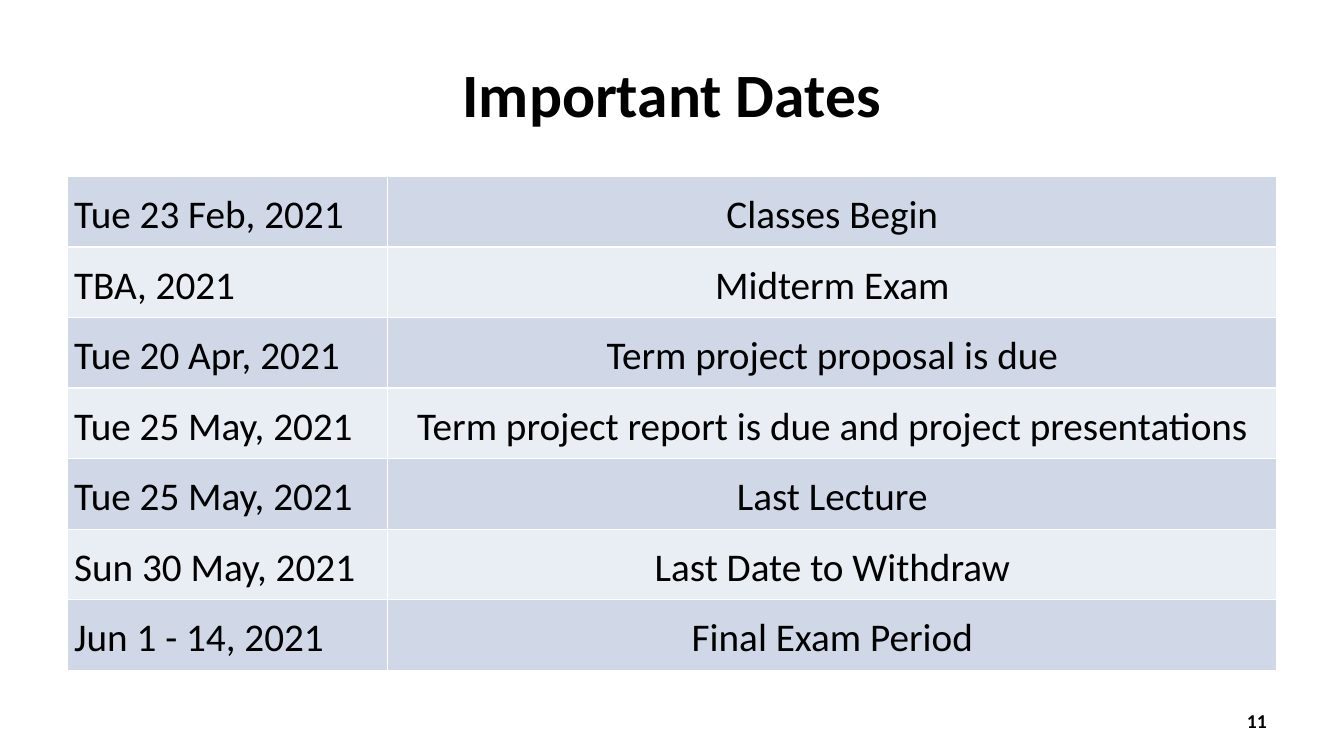
from lxml import etree
from pptx import Presentation
from pptx.dml.color import RGBColor
from pptx.enum import text
from pptx.oxml import ns
from pptx.util import Pt

BLACK = RGBColor(0, 0, 0)
DARK = RGBColor(0xD0, 0xD8, 0xE8)
LIGHT = RGBColor(0xE9, 0xED, 0xF4)
WHITE = RGBColor(0xFF, 0xFF, 0xFF)
MID = text.MSO_ANCHOR.MIDDLE
ALIGN = text.PP_ALIGN

DATES = [
    ("Tue 23 Feb, 2021", "Classes Begin"),
    ("TBA, 2021", "Midterm Exam"),
    ("Tue 20 Apr, 2021", "Term project proposal is due"),
    ("Tue 25 May, 2021", "Term project report is due and project presentations"),
    ("Tue 25 May, 2021", "Last Lecture"),
    ("Sun 30 May, 2021", "Last Date to Withdraw"),
    ("Jun 1 - 14, 2021", "Final Exam Period"),
]


def style(frame, size, bold, align):
    para = frame.paragraphs[0]
    para.alignment = align
    font = para.runs[0].font
    font.name, font.size, font.bold = "Calibri", Pt(size), bold
    font.color.rgb = BLACK


def edge(cell):
    props = cell._tc.get_or_add_tcPr()
    for i, side in enumerate(("lnL", "lnR", "lnT", "lnB")):
        line = etree.Element(ns.qn("a:" + side), w=str(Pt(1)))
        fill = etree.SubElement(line, ns.qn("a:solidFill"))
        etree.SubElement(fill, ns.qn("a:srgbClr"), val=str(WHITE))
        props.insert(i, line)


deck = Presentation()
deck.slide_width, deck.slide_height = Pt(960), Pt(540)
slide = deck.slides.add_slide(deck.slide_layouts[6])

# Title and page number
for words, box, size, align in (
    ("Important Dates", (48, 21.6, 864, 90), 44, ALIGN.CENTER),
    ("11", (688, 500.4, 224, 28.8), 14, ALIGN.RIGHT),
):
    frame = slide.shapes.add_textbox(*map(Pt, box)).text_frame
    frame.word_wrap = True
    frame.vertical_anchor = MID
    frame.text = words
    style(frame, size, True, align)

# Table of dates
rows = len(DATES)
table = slide.shapes.add_table(
    rows, 2, Pt(48), Pt(126), Pt(864), Pt(50.4 * rows)).table
table.first_row = table.horz_banding = False
for col, width in zip(table.columns, (229, 635)):
    col.width = Pt(width)

for r, pair in enumerate(DATES):
    for c, words in enumerate(pair):
        cell = table.cell(r, c)
        cell.text = words
        cell.vertical_anchor = MID
        cell.margin_left = cell.margin_right = Pt(5)
        cell.margin_top = cell.margin_bottom = Pt(0)
        cell.fill.solid()
        cell.fill.fore_color.rgb = LIGHT if r % 2 else DARK
        style(cell.text_frame, 28, False, ALIGN.CENTER if c else ALIGN.LEFT)
        cell.text_frame.paragraphs[0].line_spacing = 1.15
        edge(cell)

deck.save("out.pptx")
